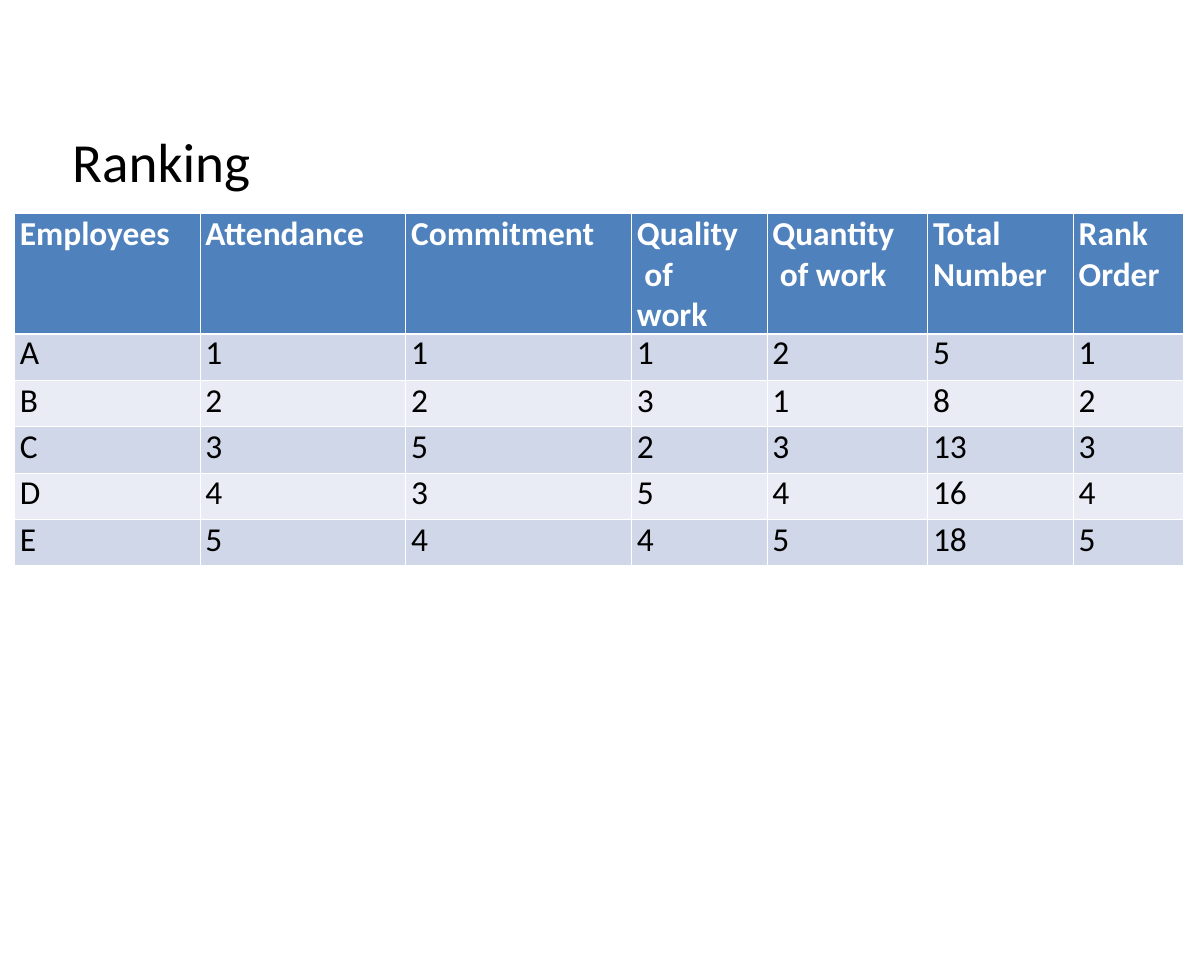
from dataclasses import dataclass

from lxml import etree
from pptx import Presentation
from pptx import util as u
from pptx.dml.color import RGBColor
from pptx.enum import text
from pptx.oxml import ns

PX = 9144


@dataclass(frozen=True)
class Theme:
    font: str = "Calibri"
    title_size: int = 66
    table_size: int = 40
    ink: str = "000000"
    white: str = "FFFFFF"
    header: str = "4F81BC"
    bands: tuple = ("D0D7E8", "E9ECF4")
    thin: int = 1
    thick: int = 3


THEME = Theme()
TITLE_BOX = (113, 211, 1773, 446)
TABLE_BOX = (24, 355, 1944, 554)
TITLE_INDENT, CELL_INDENT = 7, 9
COLUMN_WIDTHS = (308, 342, 375, 225, 267, 242, 183)
HEADER_HEIGHT, ROW_HEIGHT = 169, 77
HEADINGS = (
    ("Employees",),
    ("Attendance",),
    ("Commitment",),
    ("Quality", " of", "work"),
    ("Quantity", " of work"),
    ("Total", "Number"),
    ("Rank", "Order"),
)
RANKS = (
    ("A", 1, 1, 1, 2, 5, 1),
    ("B", 2, 2, 3, 1, 8, 2),
    ("C", 3, 5, 2, 3, 13, 3),
    ("D", 4, 3, 5, 4, 16, 4),
    ("E", 5, 4, 4, 5, 18, 5),
)


def px(length):
    return u.Emu(length * PX)


def write_lines(para, lines, size, color, bold=False):
    for index, line in enumerate(lines):
        if index:
            para.add_line_break()
        span = para.add_run()
        span.text = line
        span.font.name = THEME.font
        span.font.size = u.Pt(size)
        span.font.bold = bold
        span.font.color.rgb = RGBColor.from_string(color)


def indent(para, length):
    props = para._p.get_or_add_pPr()
    props.set("marL", str(px(length)))
    props.set("indent", "0")


def add_borders(cell, top, bottom):
    props = cell._tc.get_or_add_tcPr()
    widths = {"L": THEME.thin, "R": THEME.thin, "T": top, "B": bottom}
    for side, width in widths.items():
        line = etree.SubElement(props, ns.qn(f"a:ln{side}"), w=str(u.Pt(width)))
        fill = etree.SubElement(line, ns.qn("a:solidFill"))
        etree.SubElement(fill, ns.qn("a:srgbClr"), val=THEME.white)


def place_title(page, box):
    title = page.shapes.title
    title.left, title.top, title.width, title.height = map(px, box)
    frame = title.text_frame
    frame.margin_left = frame.margin_top = frame.margin_right = frame.margin_bottom = 0
    frame.vertical_anchor = text.MSO_ANCHOR.TOP
    frame.auto_size = text.MSO_AUTO_SIZE.SHAPE_TO_FIT_TEXT
    frame.word_wrap = True
    para = frame.paragraphs[0]
    para.alignment = text.PP_ALIGN.LEFT
    indent(para, TITLE_INDENT)
    write_lines(para, ("Ranking",), THEME.title_size, THEME.ink)


def fill_cell(cell, row, lines):
    header = row == 0
    cell.margin_left = cell.margin_top = cell.margin_right = cell.margin_bottom = 0
    add_borders(
        cell,
        THEME.thick if row == 1 else THEME.thin,
        THEME.thick if header else THEME.thin,
    )
    cell.fill.solid()
    color = THEME.header if header else THEME.bands[(row - 1) % 2]
    cell.fill.fore_color.rgb = RGBColor.from_string(color)
    para = cell.text_frame.paragraphs[0]
    indent(para, CELL_INDENT)
    if row == 1:
        para.line_spacing = u.Pt(47.6)
    else:
        para.space_before = u.Pt(0.6)
    write_lines(para, lines, THEME.table_size, THEME.white if header else THEME.ink, header)


def place_ranking_table(page, box):
    rows = [HEADINGS] + [[(str(value),) for value in rank] for rank in RANKS]
    table = page.shapes.add_table(len(rows), len(HEADINGS), *map(px, box)).table
    table.first_row = table.horz_banding = False
    for column, width in zip(table.columns, COLUMN_WIDTHS):
        column.width = px(width)
    for row, values in enumerate(rows):
        table.rows[row].height = px(ROW_HEIGHT if row else HEADER_HEIGHT)
        for column, lines in enumerate(values):
            fill_cell(table.cell(row, column), row, lines)


def main():
    deck = Presentation()
    deck.slide_width, deck.slide_height = px(2000), px(1600)
    page = deck.slides.add_slide(deck.slide_layouts[5])
    place_title(page, TITLE_BOX)
    place_ranking_table(page, TABLE_BOX)
    deck.save("out.pptx")


if __name__ == "__main__":
    main()
